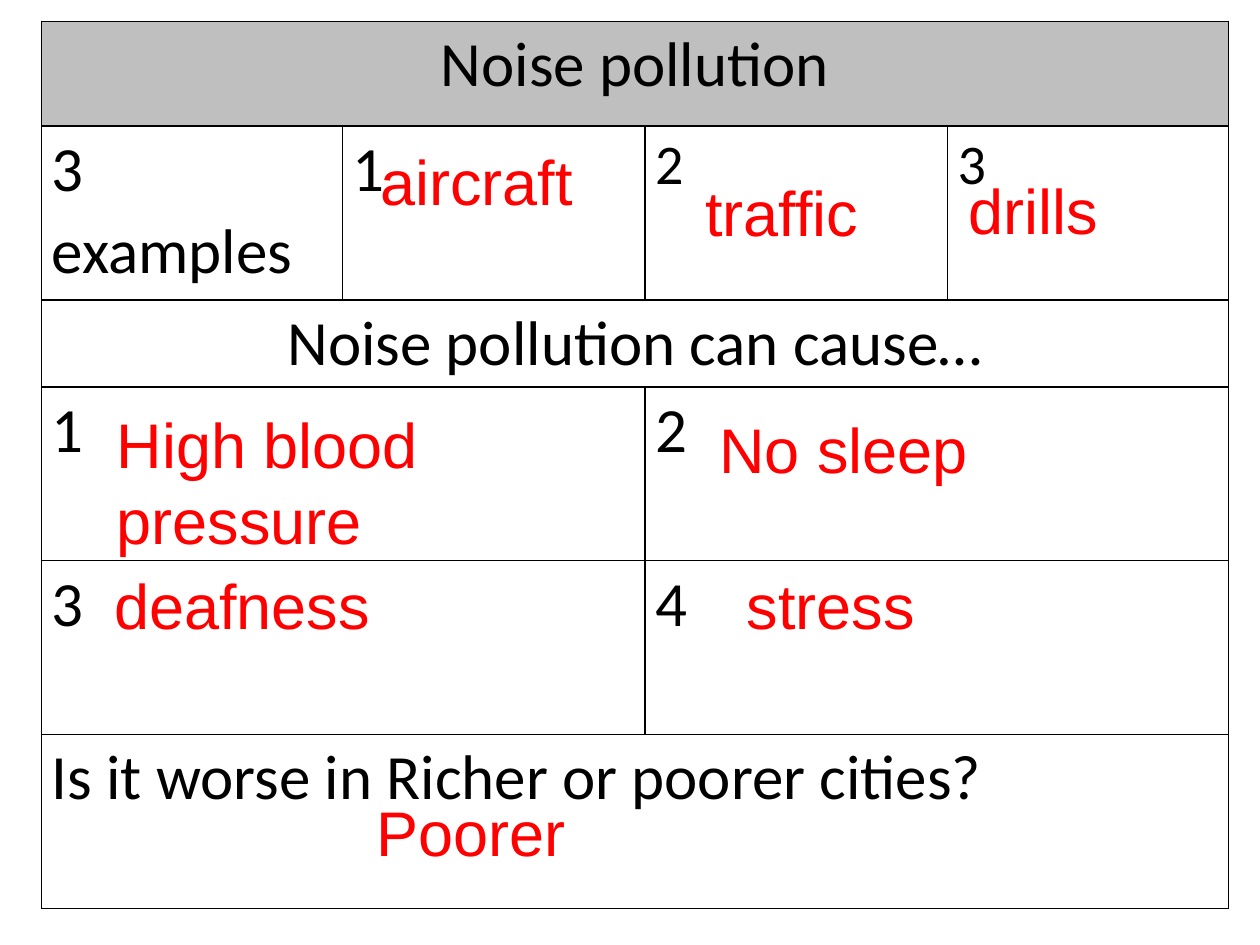
from lxml import etree
from pptx import Presentation
from pptx.dml.color import RGBColor
from pptx.enum.text import MSO_AUTO_SIZE, PP_ALIGN
from pptx.oxml.ns import qn
from pptx.util import Inches, Pt

LEFT, CENTER = PP_ALIGN.LEFT, PP_ALIGN.CENTER
GROW = MSO_AUTO_SIZE.SHAPE_TO_FIT_TEXT
BLACK = RGBColor(0x00, 0x00, 0x00)
RED = RGBColor(0xFF, 0x00, 0x00)
GREY = RGBColor(0xBF, 0xBF, 0xBF)

COLUMNS = [2.39, 2.4, 2.4, 2.23]
ROWS = [0.83, 1.38, 0.69, 1.38, 1.38, 1.38]

# row, column, columns spanned, text, size, alignment
CELLS = [
    (0, 0, 4, "Noise pollution", 36, CENTER),
    (1, 0, 1, "3 examples", 36, LEFT),
    (1, 1, 1, "1", 36, LEFT),
    (1, 2, 1, "2", 32, LEFT),
    (1, 3, 1, "3", 32, LEFT),
    (2, 0, 4, "Noise pollution can cause…", 36, CENTER),
    (3, 0, 2, "1", 36, LEFT),
    (3, 2, 2, "2", 36, LEFT),
    (4, 0, 2, "3", 36, LEFT),
    (4, 2, 2, "4", 36, LEFT),
    (5, 0, 4, "Is it worse in Richer or poorer cities?", 36, LEFT),
]

# text, left, top, width, height
ANSWERS = [
    ("aircraft", 2.92, 1.08, 2.08, 0.71),
    ("traffic", 5.5, 1.33, 2.08, 0.71),
    ("drills", 7.59, 1.31, 2.08, 0.71),
    ("High blood pressure", 0.83, 3.17, 4.17, 1.31),
    ("No sleep", 5.61, 3.21, 4.17, 0.71),
    ("deafness", 0.81, 4.45, 4.17, 0.71),
    ("stress", 5.83, 4.45, 4.17, 0.71),
    ("Poorer", 2.89, 6.25, 4.17, 0.71),
]


class Worksheet:
    """Style and drawing methods for one slide."""

    cell_font = {"name": "Calibri"}
    answer_font = {"name": "Arial", "size": Pt(36)}
    cell_format = {"margin_left": Inches(0.08), "margin_right": Inches(0.08),
                   "margin_top": 0, "margin_bottom": 0}

    def __init__(self, slide):
        self.slide = slide

    def add_text(self, tf, text, color, **font):
        p = tf.paragraphs[0]
        r = p.add_run()
        r.text = text
        for name, value in font.items():
            setattr(r.font, name, value)
        r.font.color.rgb = color
        return p

    def border(self, cell):
        tcPr = cell._tc.get_or_add_tcPr()
        for i, side in enumerate(("lnL", "lnR", "lnT", "lnB")):
            ln = etree.Element(qn(f"a:{side}"), w=str(Pt(1)))
            fill = etree.SubElement(ln, qn("a:solidFill"))
            etree.SubElement(fill, qn("a:srgbClr"), val=str(BLACK))
            tcPr.insert(i, ln)

    def table(self, left, top, widths, heights, cells):
        table = self.slide.shapes.add_table(
            len(heights), len(widths), Inches(left), Inches(top),
            Inches(sum(widths)), Inches(sum(heights))).table
        table.first_row = table.horz_banding = False
        for column, width in zip(table.columns, widths):
            column.width = Inches(width)
        for row, height in zip(table.rows, heights):
            row.height = Inches(height)
        for cell in table.iter_cells():
            cell.fill.background()
            self.border(cell)
            for name, value in self.cell_format.items():
                setattr(cell, name, value)
        for row, col, span, text, size, align in cells:
            cell = table.cell(row, col)
            if span > 1:
                cell.merge(table.cell(row, col + span - 1))
            p = self.add_text(cell.text_frame, text, BLACK,
                              size=Pt(size), **self.cell_font)
            p.alignment = align
            p.line_spacing = 1.07
        return table

    def answer(self, text, *box):
        tf = self.slide.shapes.add_textbox(*map(Inches, box)).text_frame
        tf.word_wrap = True
        tf.auto_size = GROW
        self.add_text(tf, text, RED, **self.answer_font)


def main():
    prs = Presentation()
    prs.slide_width, prs.slide_height = Inches(10), Inches(7.5)
    sheet = Worksheet(prs.slides.add_slide(prs.slide_layouts[6]))

    # Question grid with a grey heading row
    table = sheet.table(0.33, 0.17, COLUMNS, ROWS, CELLS)
    heading = table.cell(0, 0)
    heading.fill.solid()
    heading.fill.fore_color.rgb = GREY

    # Answers laid over the grid
    for answer in ANSWERS:
        sheet.answer(*answer)

    prs.save("out.pptx")


if __name__ == "__main__":
    main()
